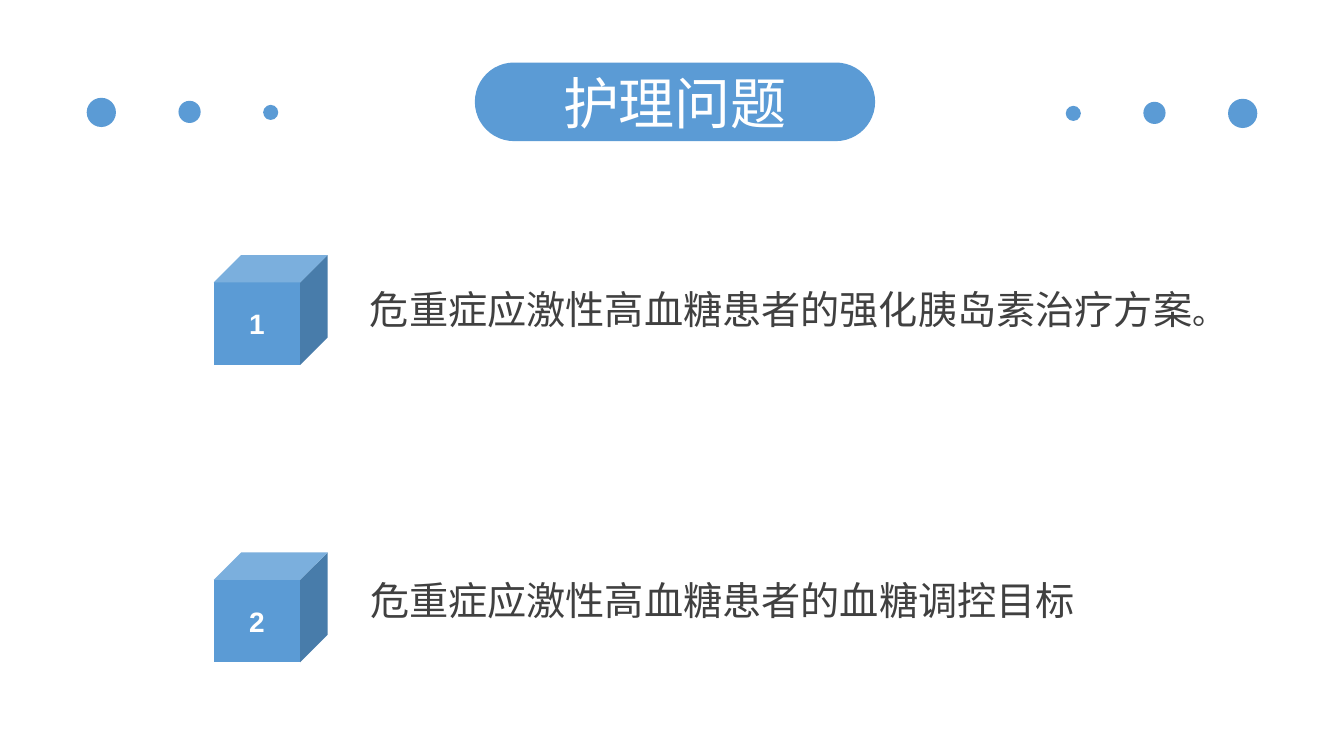
from pptx import Presentation
from pptx import util as u
from pptx.dml.color import RGBColor
from pptx.enum import shapes, text

BLUE = RGBColor(0x5B, 0x9B, 0xD5)
WHITE = RGBColor(0xFF, 0xFF, 0xFF)
GRAY = RGBColor(0x40, 0x40, 0x40)
WIDE, HIGH = 1333, 750
PX = 9144
KIND = shapes.MSO_SHAPE


class Deck:
    """Holds the style and the current slide, and draws each kind of element."""

    def __init__(self):
        self.prs = Presentation()
        self.prs.slide_width, self.prs.slide_height = WIDE * PX, HIGH * PX
        self.slide = self.prs.slides.add_slide(self.prs.slide_layouts[6])
        self.font = "Arial"

    def shape(self, kind, *box):
        item = self.slide.shapes.add_shape(kind, *(n * PX for n in box))
        item.shadow.inherit = False
        item.fill.solid()
        item.fill.fore_color.rgb = BLUE
        item.line.fill.background()
        return item

    def letter(self, item, runs, color, align, bold=False, space=1.0, pad=None):
        frame = item.text_frame
        form = {"word_wrap": True, "vertical_anchor": text.MSO_ANCHOR.MIDDLE}
        if pad is not None:
            form.update(margin_left=pad * PX, margin_right=pad * PX,
                        margin_top=0, margin_bottom=0)
        for key, val in form.items():
            setattr(frame, key, val)
        para = frame.paragraphs[0]
        para.alignment, para.line_spacing = align, space
        for words, size in runs:
            run = para.add_run()
            run.text = words
            for key, val in {"name": self.font, "size": u.Pt(size), "bold": bold}.items():
                setattr(run.font, key, val)
            run.font.color.rgb = color

    def dot(self, left, mid, size):
        self.shape(KIND.OVAL, left, mid - size // 2, size, size)

    def cube(self, top, label):
        item = self.shape(KIND.CUBE, 212, top, 113, 109)
        self.letter(item, [(label, 20)], WHITE, text.PP_ALIGN.CENTER, bold=True)

    def label(self, box, runs):
        item = self.slide.shapes.add_textbox(*(n * PX for n in box))
        self.letter(item, runs, GRAY, text.PP_ALIGN.LEFT, space=0.9, pad=0)

    def title(self, words):
        item = self.shape(KIND.ROUNDED_RECTANGLE, 471, 62, 397, 78)
        item.adjustments[0] = 0.5
        self.letter(item, [(words, 40)], WHITE, text.PP_ALIGN.CENTER, pad=10)


def main():
    deck = Deck()
    for left, size in ((1218, 29), (1134, 22), (1057, 15)):
        deck.dot(left, 112, size)
        deck.dot(WIDE - left - size, 111, size)
    items = (
        (253, (367, 253, 820, 113), [("危重症应激性高血糖患者的强化胰岛素治疗方案", 28), ("。", 24)]),
        (548, (367, 536, 769, 125), [("危重症应激性高血糖患者的血糖调控目标", 28)]),
    )
    for num, (top, box, runs) in enumerate(items, 1):
        deck.cube(top, str(num))
        deck.label(box, runs)
    deck.title("护理问题")
    deck.prs.save("out.pptx")


if __name__ == "__main__":
    main()
